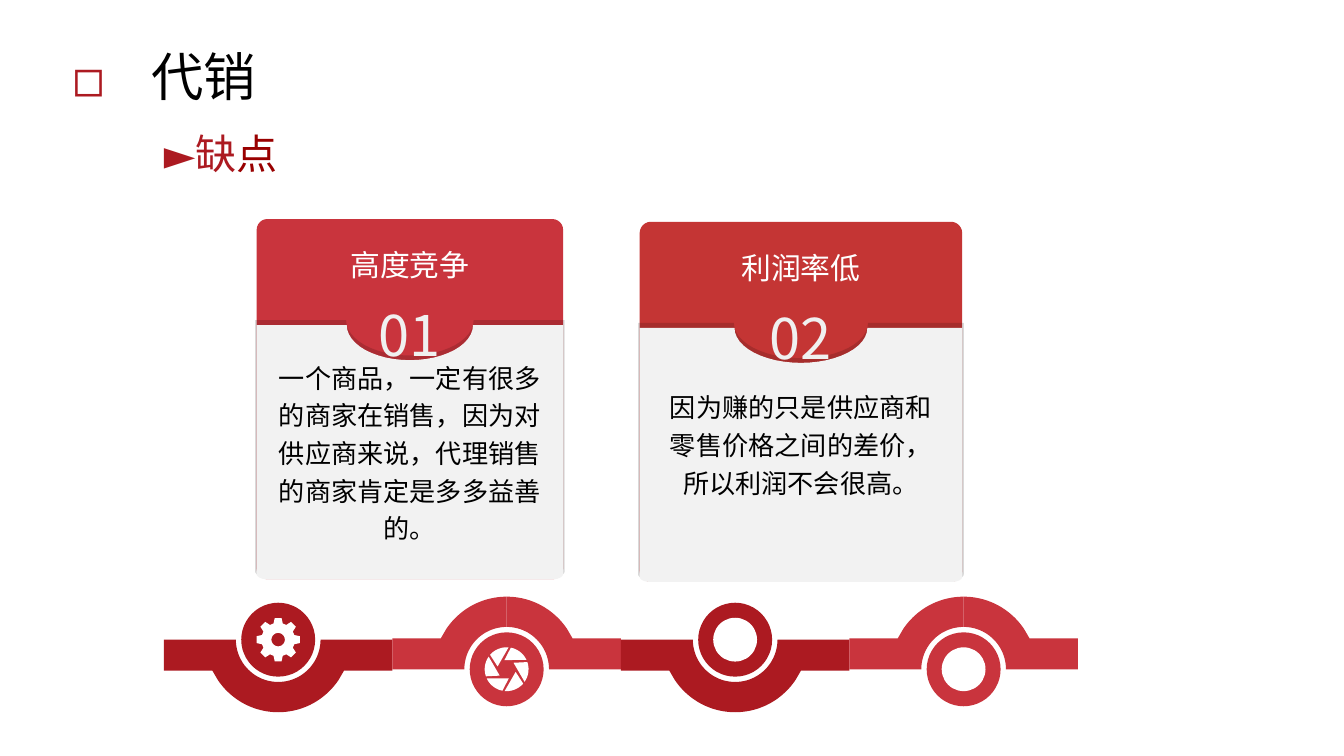
import math
from dataclasses import dataclass

import lxml.etree
import pptx
import pptx.dml.color
import pptx.enum.shapes
import pptx.enum.text
import pptx.oxml.ns
import pptx.util

# Grid: one cell is a tenth of an inch
CELL = pptx.util.Inches(0.1)
COLS, ROWS = 100, 56.25

SHAPE = pptx.enum.shapes.MSO_SHAPE
ALIGN = pptx.enum.text.PP_ALIGN
ANCHOR = pptx.enum.text.MSO_ANCHOR
qn = pptx.oxml.ns.qn


@dataclass(frozen=True)
class Theme:
    font: str = "Noto Sans CJK SC"
    dark: str = "AC1A21"
    light: str = "C9343D"
    brick: str = "C43534"
    wine: str = "990000"
    panel: str = "F2F2F2"
    pale: str = "F0F0F0"
    white: str = "FFFFFF"
    black: str = "000000"
    title: int = 28
    sub: int = 22
    head: int = 16
    count: int = 30
    body: int = 14


THEME = Theme()


def cells(*nums):
    return [round(n * CELL) for n in nums]


def rgb(code):
    return pptx.dml.color.RGBColor.from_string(code)


def child(node, tag, **attrs):
    return lxml.etree.SubElement(node, qn(tag), attrs)


def style(run, size, color):
    run.font.size = pptx.util.Pt(size)
    run.font.color.rgb = rgb(color)
    run.font.name = THEME.font
    child(run.font._element, "a:ea", typeface=THEME.font)


def paint(shape, color):
    shape.shadow.inherit = False
    shape.fill.solid()
    shape.fill.fore_color.rgb = rgb(color)
    shape.line.fill.background()
    return shape


def solid(slide, kind, box, color):
    return paint(slide.shapes.add_shape(kind, *cells(*box)), color)


def label(slide, box, text, size, color, align=ALIGN.LEFT, wrap=True):
    frame = slide.shapes.add_textbox(*cells(*box)).text_frame
    frame.word_wrap = wrap
    frame.text = text
    para = frame.paragraphs[0]
    para.alignment = align
    style(para.runs[0], size, color)
    return frame


def arc(x, y, rx, ry, start, end, steps=24):
    """Points on an ellipse, angles in degrees, clockwise from the right."""
    turns = [math.radians(start + (end - start) * i / steps)
             for i in range(steps + 1)]
    return [(x + rx * math.cos(t), y + ry * math.sin(t)) for t in turns]


def outline(slide, loops, color):
    first, *rest = [[cells(*point) for point in loop] for loop in loops]
    pen = slide.shapes.build_freeform(*first[0])
    pen.add_line_segments(first[1:])
    for loop in rest:
        pen.move_to(*loop[0])
        pen.add_line_segments(loop[1:])
    return paint(pen.convert_to_shape(), color)


def title(slide, box):
    frame = label(slide, box, "代销", THEME.title, THEME.black)
    props = frame.paragraphs[0]._p.get_or_add_pPr()
    hang = pptx.util.Inches(0.59)
    props.set("marL", str(hang))
    props.set("indent", str(-hang))
    child(child(props, "a:buClr"), "a:srgbClr", val=THEME.dark)
    child(props, "a:buFont", typeface=THEME.font)
    child(props, "a:buChar", char="◻")


def topic(slide, box):
    frame = label(slide, box, "►缺", THEME.sub, THEME.dark)
    frame.vertical_anchor = ANCHOR.MIDDLE
    frame.margin_left = cells(2.4)[0]
    para = frame.paragraphs[0]
    para.line_spacing = 1.2
    run = para.add_run()
    run.text = "点"
    style(run, THEME.sub, THEME.wine)


def card(slide, box, color, head, count, body, side, drop):
    x, y, w, h = box
    mid, edge, base = x + w / 2, y + 7.9, y + h

    # Coloured back with heading
    back = solid(slide, SHAPE.ROUNDED_RECTANGLE, box, color)
    back.adjustments[0] = 0.035
    frame = back.text_frame
    frame.word_wrap = False
    frame.vertical_anchor = ANCHOR.TOP
    frame.margin_top = frame.margin_bottom = cells(1.8)[0]
    frame.text = head
    frame.paragraphs[0].alignment = ALIGN.CENTER
    style(frame.paragraphs[0].runs[0], THEME.head, THEME.white)

    # Notched panel with a shadow cast upwards
    loop = ([(x, edge)] + arc(mid, edge, w * 0.206, 2.6, 180, 0)
            + [(x + w, edge)]
            + arc(x + w - 0.8, base - 0.4, 0.8, 0.4, 0, 90)
            + arc(x + 0.8, base - 0.4, 0.8, 0.4, 90, 180))
    panel = outline(slide, [loop], THEME.panel)
    effects = panel._element.spPr.find(qn("a:effectLst"))
    cast = child(effects, "a:outerShdw", blurRad="0", dist="25400",
                 dir="16200000", sx="101000", sy="101000",
                 algn="ctr", rotWithShape="0")
    tint = child(cast, "a:srgbClr", val=THEME.black)
    child(tint, "a:alpha", val="14000")

    # Number and body
    label(slide, (mid - 4, y + 5.6, 8, 6.1), count, THEME.count, THEME.pale,
          ALIGN.CENTER, wrap=False)
    frame = label(slide, (x + side, y + drop, w - 2 * side, 4.6), body,
                  THEME.body, THEME.black, ALIGN.CENTER)
    frame.paragraphs[0].line_spacing = 1.2


def gear(slide, x, y):
    rim = []
    for turn in range(0, 360, 45):
        for skew, reach in ((-16, 1.25), (-9, 1.63), (9, 1.63), (16, 1.25)):
            rim += arc(x, y, reach, reach, turn + skew, turn + skew, 1)[:1]
    outline(slide, [rim, arc(x, y, 0.5, 0.5, 0, 360)], THEME.white)


def lens(slide, x, y):
    blades = [arc(x, y, 1.63, 1.63, turn - 85, turn - 139)
              + arc(x, y, 0.7, 0.7, turn - 163, turn - 163, 1)[:1]
              for turn in range(0, 360, 60)]
    outline(slide, blades, THEME.white)


def dot(slide, x, y):
    solid(slide, SHAPE.OVAL, (x - 1.63, y - 1.63, 3.26, 3.26), THEME.white)


def link(slide, box, color, way, icon):
    """One chain link; way is 1 for a bump below, -1 for one above."""
    x, y, w, h = box
    mid = x + w / 2
    base = y if way > 0 else y + h
    slope = math.degrees(math.atan2(3, 4.5))
    half = (arc(0, 0, 3.15, 3.15, 90, 0) + [(w / 2, 0), (w / 2, 2.3), (4.9, 2.3)]
            + arc(0, 0, h, h, slope, 90))
    for hand in (1, -1):
        loop = [(mid + hand * px, base + way * py) for px, py in half]
        outline(slide, [loop], color)
    solid(slide, SHAPE.OVAL, (mid - 2.75, base - 2.75, 5.5, 5.5), color)
    icon(slide, mid, base)


def chain(slide, box):
    x, y, w, h = box
    icons = (gear, lens, dot, dot)
    step, tall = w / len(icons), 5.4
    for i, icon in enumerate(icons):
        low = i % 2 == 0
        top = y + h - tall if low else y
        link(slide, (x + i * step, top, step, tall),
             THEME.dark if low else THEME.light, 1 if low else -1, icon)


def main():
    deck = pptx.Presentation()
    deck.slide_width, deck.slide_height = cells(COLS, ROWS)
    slide = deck.slides.add_slide(deck.slide_layouts[6])

    title(slide, (4.4, 2.8, 27.9, 5.7))
    card(slide, (19.1, 16.3, 22.8, 26.8), THEME.light, "高度竞争", "01",
         "一个商品，一定有很多的商家在销售，因为对供应商来说，"
         "代理销售的商家肯定是多多益善的。", 0, 9.7)
    card(slide, (47.6, 16.5, 24, 26.8), THEME.brick, "利润率低", "02",
         "因为赚的只是供应商和零售价格之间的差价，所以利润不会很高。",
         0.9, 11.7)
    chain(slide, (12.2, 4.44 * 10, 68, 8.6))
    topic(slide, (9.8, 8.6, 35.4, 4.9))

    deck.save("out.pptx")


if __name__ == "__main__":
    main()
